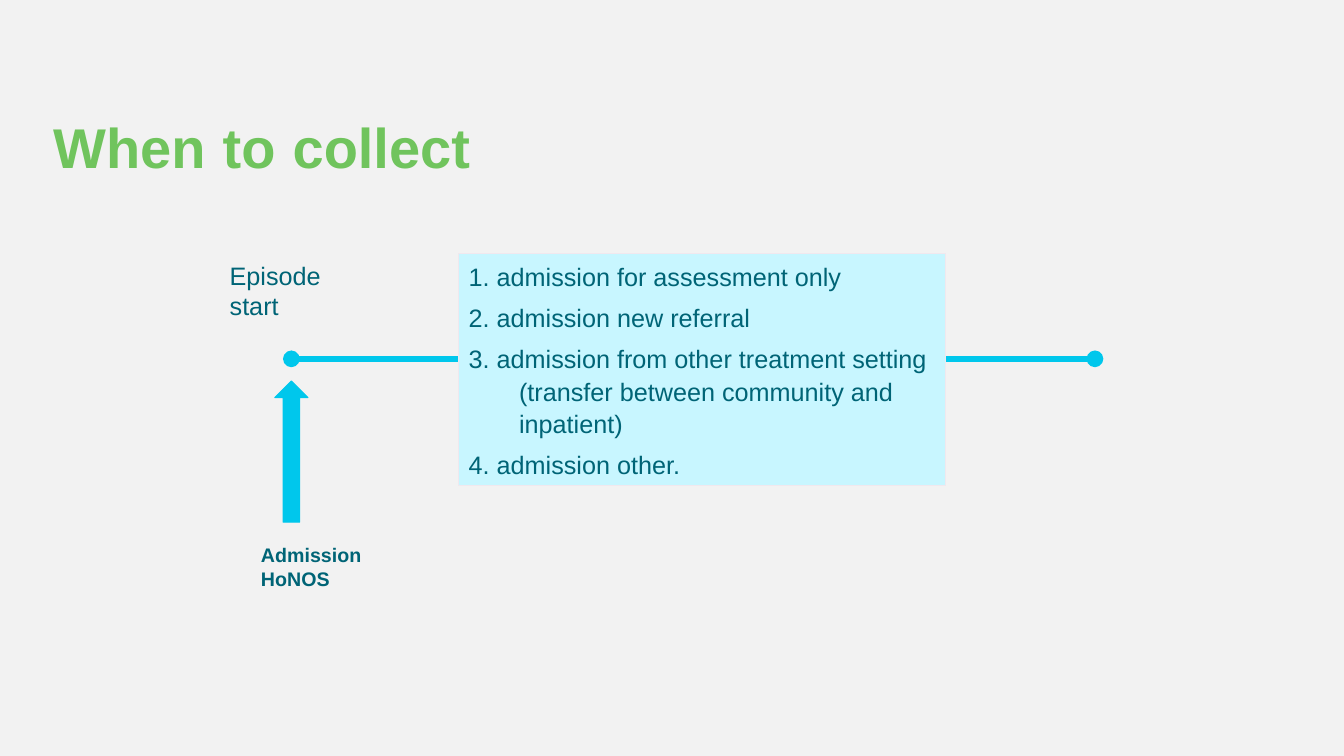
from lxml import etree
from pptx import Presentation
from pptx.dml.color import RGBColor
from pptx.enum.shapes import MSO_CONNECTOR, MSO_SHAPE
from pptx.enum.text import MSO_ANCHOR, PP_ALIGN
from pptx.oxml.ns import qn
from pptx.util import Inches, Pt

STRAIGHT = MSO_CONNECTOR.STRAIGHT
UP_ARROW, RECTANGLE = MSO_SHAPE.UP_ARROW, MSO_SHAPE.RECTANGLE
TOP, BOTTOM = MSO_ANCHOR.TOP, MSO_ANCHOR.BOTTOM
LEFT = PP_ALIGN.LEFT

COLORS = {
    "background": "F2F2F2",
    "title": "70C45D",
    "title_gap": "5D0649",
    "text": "006476",
    "accent": "00C7EC",
    "panel": "C8F6FF",
    "panel_edge": "F0E8EE",
}
FONT = "Arial"
TITLE = ["When", "to", "collect"]
LABELS = [
    ("Episode start", (2.18, 2.53, 1.5, 0.71), 18, False),
    ("Admission HoNOS", (2.49, 5.34, 1.25, 0.57), 14, True),
]
REASONS = [
    "admission for assessment only",
    "admission new referral",
    "admission from other treatment setting (transfer between community and inpatient)",
    "admission other.",
]
TITLE_BOX = (0.43, 0.4, 11.5, 1.45)
PANEL_BOX = (4.55, 2.52, 4.83, 2.3)
TIMELINE_START, TIMELINE_END, TIMELINE_Y = 2.89, 10.86, 3.56
ARROW_TOP, ARROW_WIDTH, ARROW_HEIGHT = 3.78, 0.33, 1.4


def inches(box):
    return [Inches(v) for v in box]


def color(name):
    return RGBColor.from_string(COLORS[name])


def add_run(p, text, size, name, bold=False):
    r = p.add_run()
    r.text = text
    r.font.name, r.font.size, r.font.bold = FONT, Pt(size), bold
    r.font.color.rgb = color(name)


def add_text_box(slide, box, anchor=TOP):
    tf = slide.shapes.add_textbox(*inches(box)).text_frame
    tf.word_wrap = True
    tf.vertical_anchor = anchor
    return tf


def add_block(slide, preset, box, fill, line):
    sp = slide.shapes.add_shape(preset, *inches(box))
    sp.shadow.inherit = False
    sp.fill.solid()
    sp.fill.fore_color.rgb = color(fill)
    sp.line.color.rgb = color(line)
    sp.line.width = Pt(0.75)
    return sp


def add_timeline(slide):
    cn = slide.shapes.add_connector(
        STRAIGHT, *inches((TIMELINE_START, TIMELINE_Y, TIMELINE_END, TIMELINE_Y)))
    cn.line.color.rgb = color("accent")
    cn.line.width = Pt(4)
    ln = cn.line._get_or_add_ln()
    for end in ("a:headEnd", "a:tailEnd"):
        etree.SubElement(ln, qn(end), type="oval")
    etree.SubElement(cn._element.spPr, qn("a:effectLst"))


def add_reasons(slide):
    tf = add_block(slide, RECTANGLE, PANEL_BOX, "panel", "panel_edge").text_frame
    tf.word_wrap = True
    tf.vertical_anchor = TOP
    for i, reason in enumerate(REASONS):
        p = tf.add_paragraph() if i else tf.paragraphs[0]
        p.alignment = LEFT
        p.line_spacing = 1.08
        p.space_before = Pt(3 if i else 0)
        p.space_after = Pt(3)
        pPr = p._p.get_or_add_pPr()
        pPr.set("marL", str(Inches(0.5)))
        pPr.set("indent", str(-Inches(0.5)))
        add_run(p, f"{i + 1}. {reason}", 18, "text")


def main():
    prs = Presentation()
    prs.slide_width, prs.slide_height = Inches(13.33), Inches(7.5)
    s = prs.slides.add_slide(prs.slide_layouts[6])
    s.background.fill.solid()
    s.background.fill.fore_color.rgb = color("background")

    p = add_text_box(s, TITLE_BOX, BOTTOM).paragraphs[0]
    p.line_spacing = 0.9
    for i, word in enumerate(TITLE):
        if i:
            add_run(p, " ", 44, "title_gap", True)
        add_run(p, word, 40, "title", True)

    add_timeline(s)
    for text, box, size, bold in LABELS:
        add_run(add_text_box(s, box).paragraphs[0], text, size, "text", bold)
    arrow_left = TIMELINE_START - ARROW_WIDTH / 2
    add_block(s, UP_ARROW, (arrow_left, ARROW_TOP, ARROW_WIDTH, ARROW_HEIGHT),
              "accent", "accent")
    add_reasons(s)
    prs.save("out.pptx")


if __name__ == "__main__":
    main()
